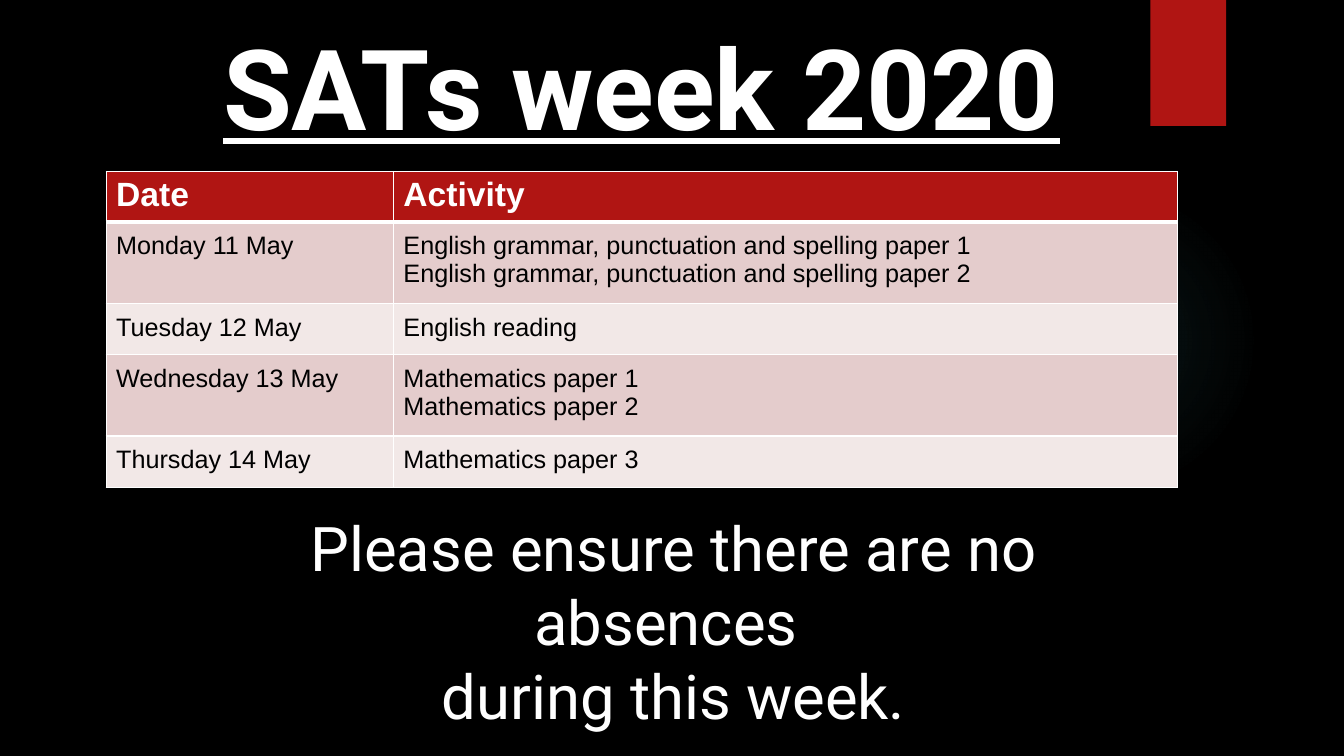
from lxml import etree
from pptx import Presentation
from pptx import util as u
from pptx.dml.color import RGBColor
from pptx.enum import shapes, text
from pptx.oxml import parse_xml
from pptx.oxml.ns import qn

Pt = u.Pt


def rgb(color):
    return RGBColor.from_string(color)


def add_run(p, content, font, size, color, bold=False, underline=False):
    r = p.add_run()
    r.text = content
    r.font.name = font
    r.font.size = Pt(size)
    r.font.color.rgb = rgb(color)
    r.font.bold = bold
    r.font.underline = underline


prs = Presentation()
prs.slide_width, prs.slide_height = Pt(960), Pt(540)
s = prs.slides.add_slide(prs.slide_layouts[6])
s.background.fill.solid()
s.background.fill.fore_color.rgb = rgb("000000")

glow = s.shapes.add_shape(shapes.MSO_SHAPE.OVAL, Pt(677.5), Pt(131.8), Pt(221.8), Pt(221.8))
glow.shadow.inherit = False
glow.line.fill.background()
stops = "".join(
    f'<a:gs pos="{pos * 1000}"><a:srgbClr val="50B9C1"><a:alpha val="{alpha * 1000}"/></a:srgbClr></a:gs>'
    for pos, alpha in [(0, 7), (36, 6), (69, 0)]
)
gradient = parse_xml(
    '<a:gradFill xmlns:a="http://schemas.openxmlformats.org/drawingml/2006/main">'
    f'<a:gsLst>{stops}</a:gsLst><a:path path="circle">'
    '<a:fillToRect l="50000" t="50000" r="50000" b="50000"/></a:path></a:gradFill>'
)
glow._element.spPr.find(qn("a:prstGeom")).addnext(gradient)

tab = s.shapes.add_shape(shapes.MSO_SHAPE.RECTANGLE, Pt(821.8), Pt(0), Pt(54), Pt(90))
tab.shadow.inherit = False
tab.fill.solid()
tab.fill.fore_color.rgb = rgb("B01513")
tab.line.fill.background()

messages = [
    (149.8, 9.4, 617, 96, 80, True, ["SATs week 2020"]),
    (121, 360.7, 720.7, 165, 44, False, ["Please ensure there are no absences ", "during this week."]),
]
for left, top, width, height, size, is_title, lines in messages:
    tf = s.shapes.add_textbox(Pt(left), Pt(top), Pt(width), Pt(height)).text_frame
    tf.word_wrap = True
    for i, line in enumerate(lines):
        p = tf.add_paragraph() if i else tf.paragraphs[0]
        p.alignment = text.PP_ALIGN.CENTER
        add_run(p, line, "Roboto", size, "FFFFFF", is_title, is_title)

rows = [
    ("Date", ["Activity"]),
    ("Monday 11 May", ["English grammar, punctuation and spelling paper 1",
                       "English grammar, punctuation and spelling paper 2"]),
    ("Tuesday 12 May", ["English reading"]),
    ("Wednesday 13 May", ["Mathematics paper 1", "Mathematics paper 2"]),
    ("Thursday 14 May", ["Mathematics paper 3"]),
]
heights = [36, 58.2, 36.6, 58.2, 36.6]
table = s.shapes.add_table(len(rows), 2, Pt(75.8), Pt(122.4), Pt(765.4), Pt(sum(heights))).table
for column, width in zip(table.columns, [205.2, 560.2]):
    column.width = Pt(width)

for i, (date, activities) in enumerate(rows):
    table.rows[i].height = Pt(heights[i])
    header = i == 0
    for j, lines in enumerate([[date], activities]):
        cell = table.cell(i, j)
        cell.margin_left = cell.margin_right = Pt(7.2)
        cell.margin_top = cell.margin_bottom = Pt(3.6 if header else 7.2)
        tcPr = cell._tc.get_or_add_tcPr()
        for side in "LRTB":
            thick = (header and side == "B") or (i == 1 and side == "T")
            ln = etree.SubElement(tcPr, qn(f"a:ln{side}"), w=str(Pt(3 if thick else 1)))
            fill = etree.SubElement(ln, qn("a:solidFill"))
            etree.SubElement(fill, qn("a:srgbClr"), val="FFFFFF")
        cell.fill.solid()
        cell.fill.fore_color.rgb = rgb("B01513" if header else "E4CCCC" if i % 2 else "F2E8E7")
        for k, line in enumerate(lines):
            p = cell.text_frame.add_paragraph() if k else cell.text_frame.paragraphs[0]
            add_run(p, line, "Arial", 24 if header else 18, "FFFFFF" if header else "000000", header)

prs.save("out.pptx")
